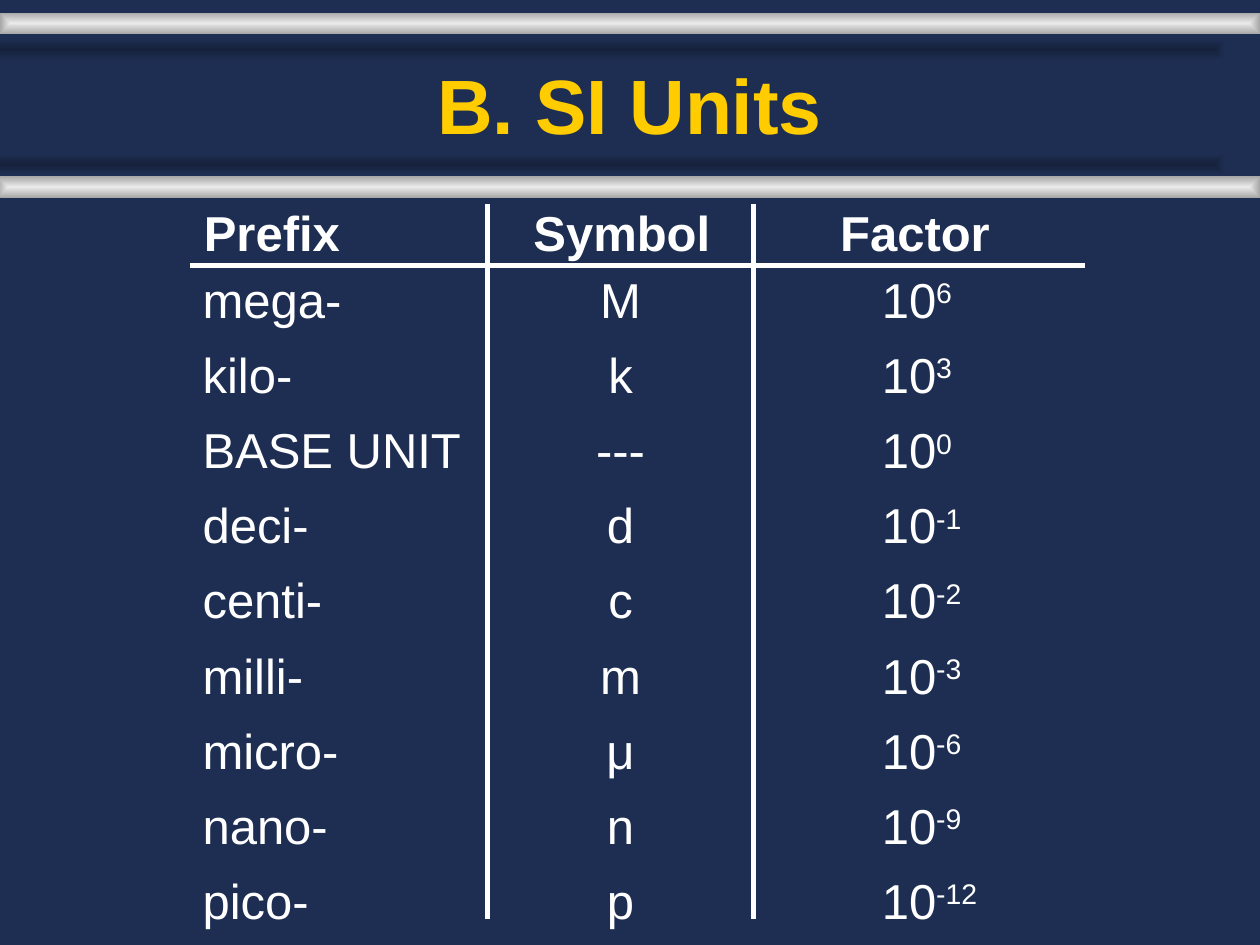
from lxml import etree
from pptx import Presentation
from pptx.dml.color import RGBColor
from pptx.enum.shapes import MSO_CONNECTOR, MSO_SHAPE
from pptx.enum.text import MSO_ANCHOR, MSO_AUTO_SIZE, PP_ALIGN
from pptx.oxml.ns import qn
from pptx.util import Inches, Pt

LEFT, CENTER = PP_ALIGN.LEFT, PP_ALIGN.CENTER
RECTANGLE, STRAIGHT = MSO_SHAPE.RECTANGLE, MSO_CONNECTOR.STRAIGHT
FONT = "Arial"
TITLE_ONLY = 5
COLORS = {
    "background": "1E2E53",
    "bar_core": "EAEAEA",
    "bar_edge": "A7A7A7",
    "shadow_core": "15213B",
    "title": "FFCC00",
    "text": "FFFFFF",
}
UNITS = [
    ("mega-", "M", "6"),
    ("kilo-", "k", "3"),
    ("BASE UNIT", "---", "0"),
    ("deci-", "d", "-1"),
    ("centi-", "c", "-2"),
    ("milli-", "m", "-3"),
    ("micro-", "μ", "-6"),
    ("nano-", "n", "-9"),
    ("pico-", "p", "-12"),
]
CELL_HEIGHT = 0.57


def color(name):
    return RGBColor.from_string(COLORS[name])


def add_run(paragraph, text, size, color_name, bold=False):
    run = paragraph.add_run()
    run.text = text
    run.font.name = FONT
    run.font.size = Pt(size)
    run.font.bold = bold
    run.font.color.rgb = color(color_name)
    return run


def add_glow_bar(shapes, left, top, width, height, core, edge):
    """Add a bar whose colour runs from its centre to its edges."""
    bar = shapes.add_shape(RECTANGLE, Inches(left), Inches(top), Inches(width), Inches(height))
    bar.shadow.inherit = False
    bar.line.fill.background()
    bar.fill.gradient()
    for stop, name in zip(bar.fill.gradient_stops, (core, edge)):
        stop.color.rgb = color(name)
    gradient = bar._element.spPr.find(qn("a:gradFill"))
    linear = gradient.find(qn("a:lin"))
    center_path = etree.Element(qn("a:path"), {"path": "shape"})
    etree.SubElement(center_path, qn("a:fillToRect"), {side: "50000" for side in "ltrb"})
    gradient.replace(linear, center_path)


def add_rail(slide, left, top, width, shadow_offset):
    """Add a metal bar and its dark shadow, set off to the left."""
    rail = slide.shapes.add_group_shape().shapes
    add_glow_bar(rail, left, top, width, 0.17, "bar_core", "bar_edge")
    add_glow_bar(rail, left - 0.28, top + shadow_offset, width, 0.17,
                 "shadow_core", "background")


def place_title(slide, left, top, width, height):
    title = slide.shapes.title
    title.left, title.top = Inches(left), Inches(top)
    title.width, title.height = Inches(width), Inches(height)
    frame = title.text_frame
    frame.auto_size = MSO_AUTO_SIZE.NONE
    frame.word_wrap = True
    frame.vertical_anchor = MSO_ANCHOR.BOTTOM
    paragraph = frame.paragraphs[0]
    paragraph.alignment = CENTER
    add_run(paragraph, "B. SI Units", 44, "title", bold=True)


def add_cell(shapes, left, top, width, text, alignment=LEFT, bold=False, exponent=None):
    cell = shapes.add_textbox(Inches(left), Inches(top), Inches(width), Inches(CELL_HEIGHT))
    frame = cell.text_frame
    frame.word_wrap = True
    frame.auto_size = MSO_AUTO_SIZE.SHAPE_TO_FIT_TEXT
    paragraph = frame.paragraphs[0]
    paragraph.alignment = alignment
    add_run(paragraph, text, 28, "text", bold)
    if exponent is not None:
        power = add_run(paragraph, exponent, 28, "text", bold)
        power.font._element.set("baseline", "30000")


def add_rule(slide, x1, y1, x2, y2):
    rule = slide.shapes.add_connector(STRAIGHT, Inches(x1), Inches(y1), Inches(x2), Inches(y2))
    rule.line.color.rgb = color("text")
    rule.line.width = Pt(3)
    etree.SubElement(rule._element.spPr, qn("a:effectLst"))


def add_unit_table(slide, left, top, width, height):
    """Add the headings, the unit rows and the ruled lines between them."""
    symbol_left, factor_left = left + 2, left + 5.39
    first_row = top + 0.53
    pitch = (height - 0.53 - CELL_HEIGHT) / (len(UNITS) - 1)

    add_cell(slide.shapes, left + 0.01, top, 2.83, "Prefix", bold=True)
    add_cell(slide.shapes, symbol_left + 0.01, top, 2.83, "Symbol", CENTER, bold=True)
    add_cell(slide.shapes, left + 5.06, top, 2.19, "Factor", bold=True)

    for index, (prefix, symbol, exponent) in enumerate(UNITS):
        row = slide.shapes.add_group_shape().shapes
        row_top = first_row + index * pitch
        add_cell(row, left, row_top, 2.83, prefix)
        add_cell(row, symbol_left, row_top, 2.83, symbol, CENTER)
        add_cell(row, factor_left, row_top, 1.81, "10", exponent=exponent)

    add_rule(slide, left, top + 0.55, left + width, top + 0.55)
    for x in (left + 2.36, left + 4.47):
        add_rule(slide, x, top + 0.06, x, top + height - 0.14)


def main():
    prs = Presentation()
    prs.slide_width, prs.slide_height = Inches(10), Inches(7.5)
    slide = prs.slides.add_slide(prs.slide_layouts[TITLE_ONLY])
    slide.background.fill.solid()
    slide.background.fill.fore_color.rgb = color("background")

    add_rail(slide, 0, 0.1, 10, shadow_offset=0.21)
    add_rail(slide, -0.02, 1.4, 10.02, shadow_offset=-0.18)
    slide.shapes._spTree.append(slide.shapes.title._element)
    place_title(slide, 0.75, 0.32, 8.5, 0.92)
    add_unit_table(slide, 1.51, 1.56, 7.1, 5.87)
    prs.save("out.pptx")


if __name__ == "__main__":
    main()
